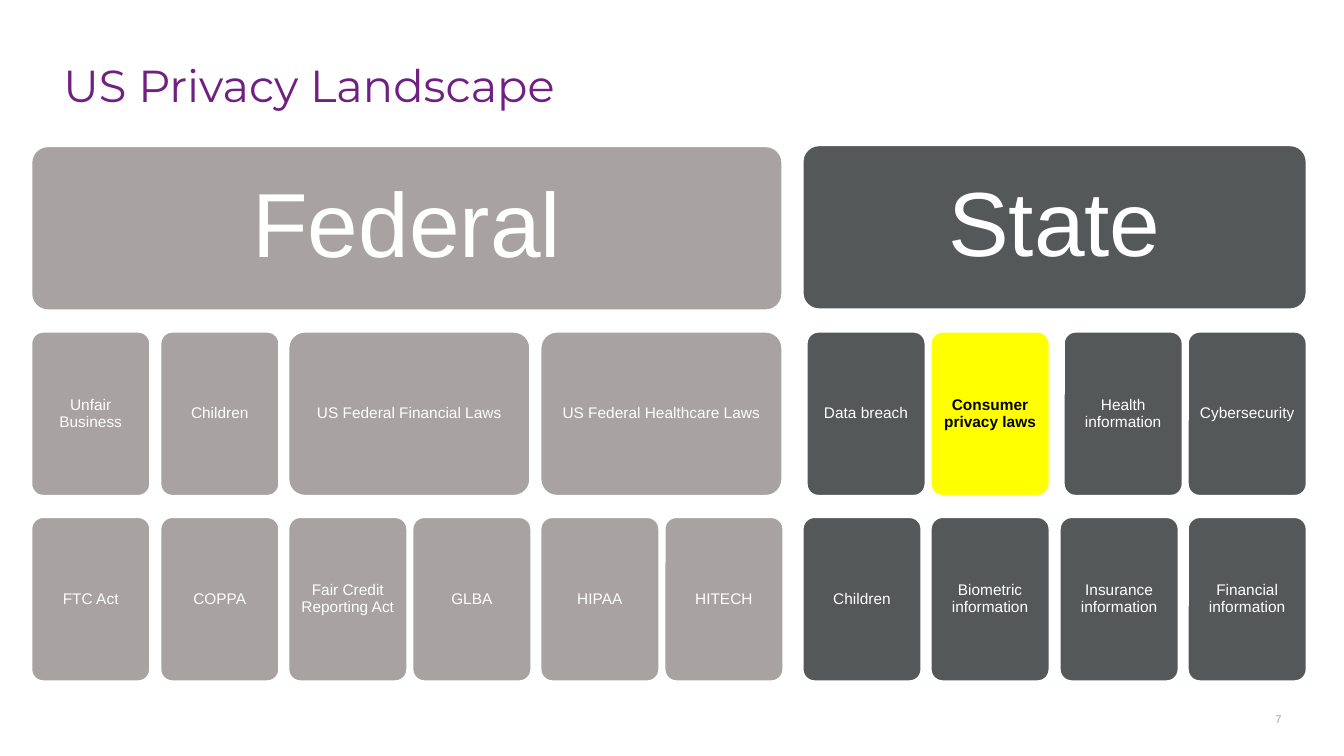
from dataclasses import dataclass

from pptx import Presentation
from pptx.dml.color import RGBColor
from pptx.enum.shapes import MSO_SHAPE
from pptx.enum.text import MSO_ANCHOR, PP_ALIGN
from pptx.util import Inches, Pt


@dataclass(frozen=True)
class Theme:
    purple: str = "702082"
    federal: str = "A8A2A2"
    state: str = "545859"
    highlight: str = "FFFF00"
    white: str = "FFFFFF"
    black: str = "000000"
    title_font: str = "Montserrat"
    body_font: str = "Arial"
    title_size: int = 32
    level_size: int = 65
    law_size: int = 11
    number_size: int = 8
    outline: float = 1.5


THEME = Theme()
CARD_WIDTH, WIDE_WIDTH, CARD_HEIGHT = 1.18, 2.4, 1.63
AREA_TOP, LAW_TOP = 3.29, 5.13

FEDERAL_AREAS = [
    (0.31, CARD_WIDTH, "Unfair Business"),
    (1.59, CARD_WIDTH, "Children"),
    (2.86, WIDE_WIDTH, "US Federal Financial Laws"),
    (5.36, WIDE_WIDTH, "US Federal Healthcare Laws"),
]
FEDERAL_LAWS = [
    (0.31, CARD_WIDTH, "FTC Act"),
    (1.59, CARD_WIDTH, "COPPA"),
    (2.86, CARD_WIDTH, "Fair Credit Reporting Act"),
    (4.09, CARD_WIDTH, "GLBA"),
    (5.36, CARD_WIDTH, "HIPAA"),
    (6.59, CARD_WIDTH, "HITECH"),
]
STATE_AREAS = [
    (8, CARD_WIDTH, "Data breach"),
    (9.23, CARD_WIDTH, "Consumer privacy laws"),
    (10.55, CARD_WIDTH, "Health information"),
    (11.78, CARD_WIDTH, "Cybersecurity"),
]
STATE_LAWS = [
    (7.96, CARD_WIDTH, "Children"),
    (9.23, CARD_WIDTH, "Biometric information"),
    (10.51, CARD_WIDTH, "Insurance information"),
    (11.78, CARD_WIDTH, "Financial information"),
]
HIGHLIGHTED = "Consumer privacy laws"


def write(holder, text, color, size, font=THEME.body_font, bold=False,
          align=PP_ALIGN.LEFT, anchor=MSO_ANCHOR.TOP, inset=0, spacing=0.9):
    frame = holder.text_frame
    margin = Inches(inset)
    frame.text = text
    paragraph = frame.paragraphs[0]
    formats = [
        (frame, {"word_wrap": True, "vertical_anchor": anchor,
                 "margin_left": margin, "margin_right": margin,
                 "margin_top": margin, "margin_bottom": margin}),
        (paragraph, {"alignment": align, "line_spacing": spacing}),
        (paragraph.runs[0].font, {"name": font, "size": Pt(size), "bold": bold}),
    ]
    for target, values in formats:
        for attribute, value in values.items():
            setattr(target, attribute, value)
    paragraph.runs[0].font.color.rgb = RGBColor.from_string(color)


def add_label(slide, left, top, width, height, text, color, size, **style):
    label = slide.shapes.add_textbox(
        Inches(left), Inches(top), Inches(width), Inches(height))
    write(label, text, color, size, **style)


def add_card(slide, left, top, width, text, fill, size=THEME.law_size,
             color=THEME.white, bold=False):
    card = slide.shapes.add_shape(
        MSO_SHAPE.ROUNDED_RECTANGLE,
        Inches(left), Inches(top), Inches(width), Inches(CARD_HEIGHT))
    card.adjustments[0] = 0.1
    card.shadow.inherit = False
    card.fill.solid()
    card.fill.fore_color.rgb = RGBColor.from_string(fill)
    card.line.color.rgb = RGBColor.from_string(THEME.white)
    card.line.width = Pt(THEME.outline)
    write(card, text, color, size, bold=bold, align=PP_ALIGN.CENTER,
          anchor=MSO_ANCHOR.MIDDLE, inset=0.05)


def add_row(slide, top, entries, fill):
    for left, width, text in entries:
        if text == HIGHLIGHTED:
            add_card(slide, left, top, width, text, THEME.highlight,
                     color=THEME.black, bold=True)
        else:
            add_card(slide, left, top, width, text, fill)


def main():
    deck = Presentation()
    deck.slide_width, deck.slide_height = Inches(13.33), Inches(7.5)
    slide = deck.slides.add_slide(deck.slide_layouts[6])

    add_label(slide, 0.63, 0.63, 12.07, 1.25, "US Privacy Landscape",
              THEME.purple, THEME.title_size, font=THEME.title_font)
    add_label(slide, 11.99, 7.07, 0.72, 0.2, "7", THEME.federal,
              THEME.number_size, align=PP_ALIGN.RIGHT, spacing=1.0)

    add_card(slide, 0.31, 1.45, 7.45, "Federal", THEME.federal, THEME.level_size)
    add_row(slide, AREA_TOP, FEDERAL_AREAS, THEME.federal)
    add_row(slide, LAW_TOP, FEDERAL_LAWS, THEME.federal)

    add_card(slide, 7.96, 1.44, 5, "State", THEME.state, THEME.level_size)
    add_row(slide, AREA_TOP, STATE_AREAS, THEME.state)
    add_row(slide, LAW_TOP, STATE_LAWS, THEME.state)

    deck.save("out.pptx")


if __name__ == "__main__":
    main()
